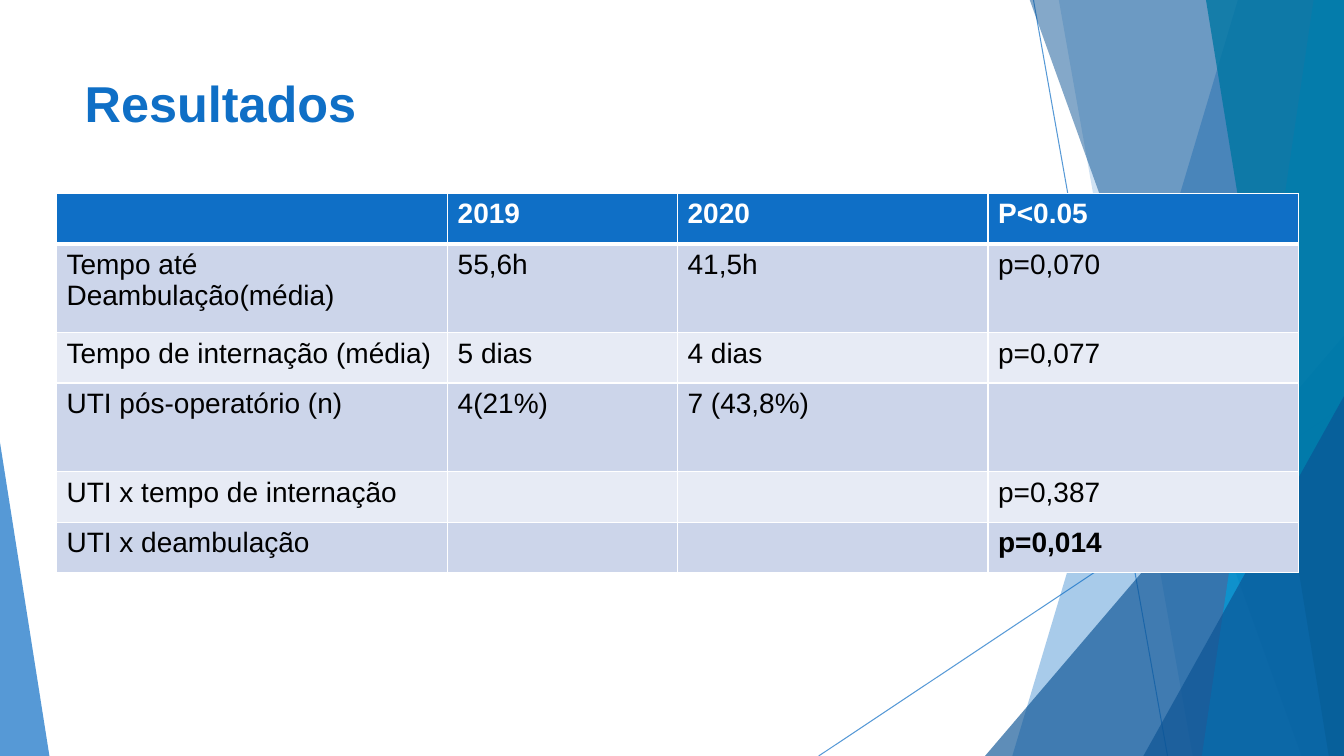
from lxml.etree import SubElement
from pptx import Presentation
from pptx.dml.color import RGBColor
from pptx.enum.shapes import MSO_CONNECTOR as Connector, MSO_SHAPE as Shape
from pptx.enum.text import MSO_ANCHOR as Anchor, PP_ALIGN as Align
from pptx.oxml import parse_xml
from pptx.oxml.ns import nsdecls, qn
from pptx.util import Inches, Pt

WIDTH, HEIGHT = 13.33, 7.5
BLUE, NAVY, CYAN, TEAL = "0F6FC6", "0B5394", "009DD9", "0076A3"
WHITE, BLACK = "FFFFFF", "000000"
BANDS = ["E7EBF5", "CCD5EA"]


def paint(target, color, opacity=None, element=None):
    """Set a solid colour on a fill or font, with opacity in percent."""
    if hasattr(target, "solid"):
        target.solid()
        target = target.fore_color
    target.rgb = RGBColor.from_string(color)
    if opacity is not None:
        for tint in element.iter(qn("a:srgbClr")):
            SubElement(tint, qn("a:alpha"), val=str(opacity * 1000))


def style_text(para, color, **values):
    for name, value in {"name": "Arial", **values}.items():
        setattr(para.font, name, value)
    paint(para.font.color, color)


deck = Presentation()
deck.slide_width, deck.slide_height = Inches(WIDTH), Inches(HEIGHT)
page = deck.slides.add_slide(deck.slide_layouts[5])

# Thin crossing lines
for ends in [(10.25, 0, 11.58, HEIGHT), (WIDTH, 4.03, 8.12, HEIGHT)]:
    line = page.shapes.add_connector(Connector.STRAIGHT, *map(Inches, ends))
    line.line.width = Pt(0.75)
    paint(line.line.fill, BLUE, 70, line.element)
    SubElement(line.element.spPr, qn("a:effectLst"))

# Facets: (top x, bottom x, ...) reach the right edge; (left, top, width, apex, ...) are triangles
facets = [
    (12.28, 10.04, BLUE, 36),
    (10.5, 11.83, BLUE, 20),
    (9.77, 3.33, 3.56, 1, NAVY, 66),
    (10.21, 12.91, NAVY, 50),
    (13.03, 11.92, CYAN, 70),
    (11.96, 13.18, TEAL, 80),
    (11.34, 3.93, 1.99, 1, NAVY, 66),
    (0, 4.39, 0.49, 0, BLUE, 70),
]
for *place, color, opacity in facets:
    if len(place) == 2:
        top_x, bottom_x = place
        corners = [(WIDTH, -0.01), (WIDTH, HEIGHT), (bottom_x, HEIGHT)]
        outline = page.shapes.build_freeform(Inches(top_x), Inches(-0.01))
        outline.add_line_segments([(Inches(x), Inches(y)) for x, y in corners])
        facet = outline.convert_to_shape()
    else:
        left, top, width, apex = place
        facet = page.shapes.add_shape(
            Shape.ISOSCELES_TRIANGLE, *map(Inches, (left, top, width, HEIGHT - top)))
        facet.adjustments[0] = apex
    facet.shadow.inherit = False
    facet.line.fill.background()
    paint(facet.fill, color, opacity, facet.element)

# Title
title = page.shapes.title
for name, value in {"left": 0.74, "top": 0.67, "width": 9.4, "height": 1.44}.items():
    setattr(title, name, Inches(value))
title.text_frame.text = "Resultados"
title.text_frame.vertical_anchor = Anchor.TOP
heading = title.text_frame.paragraphs[0]
heading.alignment = Align.LEFT
style_text(heading, BLUE, size=Pt(36), bold=True)

# Results table
results = [
    ["", "2019", "2020", "P<0.05"],
    ["Tempo até Deambulação(média)", "55,6h", "41,5h", "p=0,070"],
    ["Tempo de internação (média)", "5 dias", "4 dias", "p=0,077"],
    ["UTI pós-operatório (n)", "4(21%)", "7 (43,8%)", ""],
    ["UTI x tempo de internação", "", "", "p=0,387"],
    ["UTI x deambulação", "", "", "p=0,014"],
]
column_widths = [3.88, 2.28, 3.08, 3.08]
row_heights = [0.5, 0.88, 0.5, 0.88, 0.5, 0.5]
table = page.shapes.add_table(
    len(results), len(column_widths), Inches(0.56), Inches(1.92),
    Inches(sum(column_widths)), Inches(sum(row_heights))).table
for column, width in zip(table.columns, column_widths):
    column.width = Inches(width)
for row, height in zip(table.rows, row_heights):
    row.height = Inches(height)

for row_index, texts in enumerate(results):
    header = row_index == 0
    for column_index, text in enumerate(texts):
        cell = table.cell(row_index, column_index)
        cell.text = text
        style_text(cell.text_frame.paragraphs[0], WHITE if header else BLACK,
                   size=Pt(20), bold=header or text == "p=0,014")
        paint(cell.fill, BLUE if header else BANDS[row_index % 2])
        # White borders, heavier under the header
        for position, side in enumerate("LRTB"):
            heavy = (row_index, side) in [(0, "B"), (1, "T")]
            border = parse_xml(
                f'<a:ln{side} {nsdecls("a")} w="{Pt(3 if heavy else 1)}"><a:solidFill>'
                f'<a:srgbClr val="{WHITE}"/></a:solidFill></a:ln{side}>')
            cell._tc.get_or_add_tcPr().insert(position, border)

deck.save("out.pptx")
